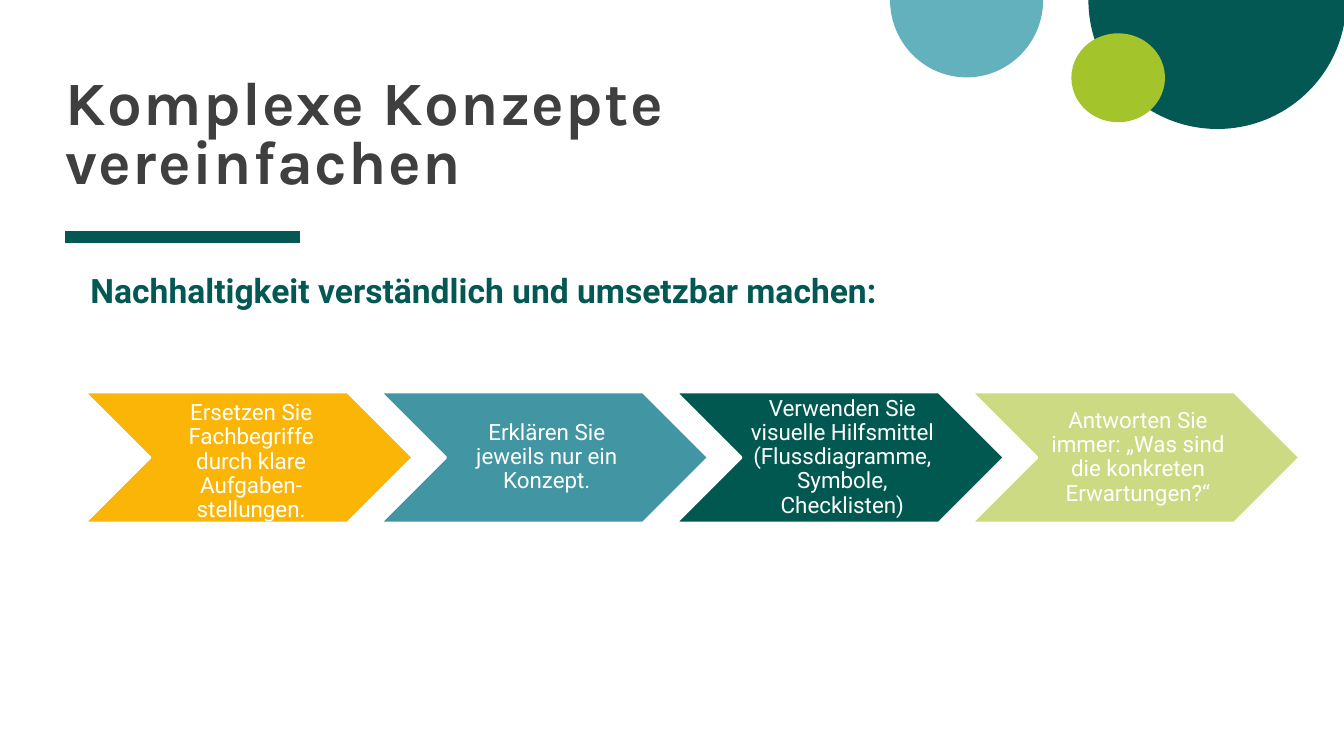
from lxml import etree
from pptx import Presentation
from pptx.dml.color import RGBColor
from pptx.enum.shapes import MSO_CONNECTOR, MSO_SHAPE
from pptx.enum.text import MSO_ANCHOR, PP_ALIGN
from pptx.oxml.ns import qn
from pptx.util import Cm, Pt

PIE, OVAL, CHEVRON = MSO_SHAPE.PIE, MSO_SHAPE.OVAL, MSO_SHAPE.CHEVRON
LINE = MSO_CONNECTOR.STRAIGHT
TOP, MIDDLE, BOTTOM = MSO_ANCHOR.TOP, MSO_ANCHOR.MIDDLE, MSO_ANCHOR.BOTTOM
LEFT, CENTER = PP_ALIGN.LEFT, PP_ALIGN.CENTER
GREEN, WHITE = "035854", "FFFFFF"
STEPS = [
    ("Ersetzen Sie Fachbegriffe durch klare Aufgaben-stellungen.", "FAB506", 0.3),
    ("Erklären Sie jeweils nur ein Konzept.", "4295A2", 0.08),
    ("Verwenden Sie visuelle Hilfsmittel (Flussdiagramme, Symbole, Checklisten)",
     "005851", 0.08),
    ("Antworten Sie immer: „Was sind die konkreten Erwartungen?“", "CBDA83", 0.08),
]


def color(code):
    """Turn a hex string into a colour."""
    return RGBColor.from_string(code)


def place(shape, box):
    """Move and size a shape, in centimetres."""
    shape.left, shape.top, shape.width, shape.height = [Cm(v) for v in box]


def write(shape, text, font, size, code, bold, align, anchor, space, pads):
    """Fill a shape with one formatted paragraph."""
    frame = shape.text_frame
    frame.text = text
    frame.word_wrap = True
    frame.vertical_anchor = anchor
    (frame.margin_left, frame.margin_top,
     frame.margin_right, frame.margin_bottom) = [Cm(v) for v in pads]
    para = frame.paragraphs[0]
    para.alignment = align
    para.line_spacing = space
    para.space_before = Pt(0)
    run = para.runs[0].font
    run.name, run.size, run.bold = font, Pt(size), bold
    run.color.rgb = color(code)


def draw(slide, kind, box, code):
    """Add a plain filled shape without outline."""
    shape = slide.shapes.add_shape(kind, *[Cm(v) for v in box])
    shape.shadow.inherit = False
    shape.fill.solid()
    shape.fill.fore_color.rgb = color(code)
    shape.line.fill.background()
    return shape


def half(slide, box, code):
    """Add the lower half of a disc."""
    shape = draw(slide, PIE, box, code)
    shape.adjustments[0] = 0
    shape.adjustments[1] = 108


def rule(slide, left, top, width):
    """Add the thick line below the title."""
    line = slide.shapes.add_connector(
        LINE, Cm(left), Cm(top), Cm(left + width), Cm(top))
    line.line.color.rgb = color(GREEN)
    line.line.width = Pt(8)
    etree.SubElement(line._element.spPr, qn("a:effectLst"))


def head(slide):
    """Fill the title placeholder."""
    title = slide.shapes.title
    place(title, (1.65, 0.53, 18.85, 4.42))
    write(title, "Komplexe Konzepte vereinfachen", "Karla", 44, "3F3F3F",
          True, LEFT, BOTTOM, 0.8, (0, 0, 0, 0))
    title.text_frame.paragraphs[0].runs[0].font._element.set("spc", "100")


def lead(slide):
    """Fill the body placeholder with the unbulleted lead line."""
    body = slide.placeholders[1]
    place(body, (1.65, 6.35, 28.45, 2.87))
    write(body, "Nachhaltigkeit verständlich und umsetzbar machen:", "Roboto",
          24, GREEN, True, LEFT, TOP, 0.8, (0, 0.64, 0, 0))
    props = body.text_frame.paragraphs[0]._p.get_or_add_pPr()
    props.set("marL", str(Cm(1.27)))
    props.set("indent", str(-Cm(0.64)))
    etree.SubElement(props, qn("a:buNone"))


def chain(slide):
    """Add the evenly spaced row of chevrons."""
    for i, (text, code, pad) in enumerate(STEPS):
        step = draw(slide, CHEVRON, (2.13 + 7.45 * i, 9.88, 8.28, 3.3), code)
        step.line.color.rgb = color(WHITE)
        step.line.width = Pt(2)
        write(step, text, "Roboto", 16, WHITE, False, CENTER, MIDDLE, 0.9,
              (0.2, pad, 0.08, 0.08))


def main():
    """Build the slide and save it."""
    deck = Presentation()
    deck.slide_width, deck.slide_height = Cm(33.87), Cm(19.05)
    slide = deck.slides.add_slide(deck.slide_layouts[1])
    half(slide, (27.43, -3.25, 6.5, 6.5), GREEN)
    rule(slide, 1.65, 5.97, 5.92)
    half(slide, (22.43, -1.96, 3.86, 3.91), "64B1BE")
    draw(slide, OVAL, (27, 0.84, 2.36, 2.24), "A3C42A")
    head(slide)
    lead(slide)
    chain(slide)
    deck.save("out.pptx")


if __name__ == "__main__":
    main()
